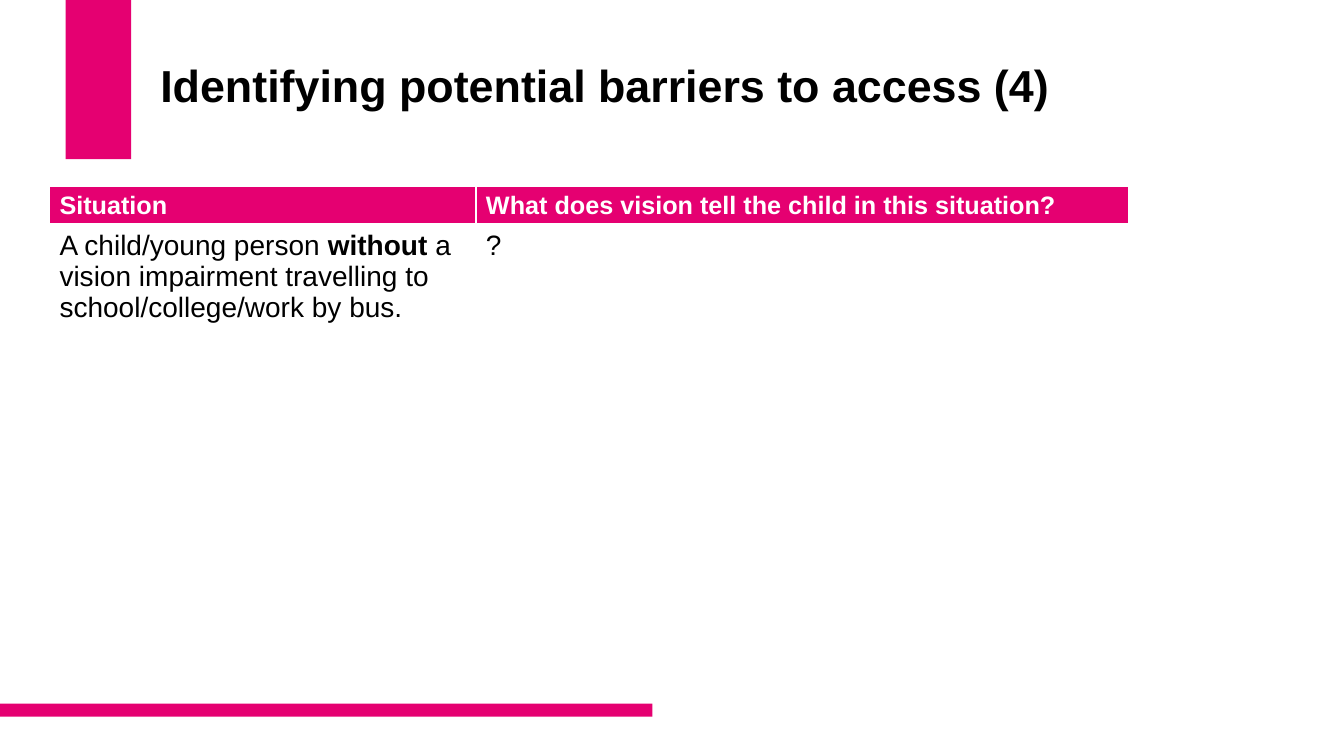
from lxml.etree import SubElement
from pptx import Presentation
from pptx.dml.color import RGBColor
from pptx.enum.shapes import MSO_SHAPE
from pptx.enum.text import MSO_ANCHOR, PP_ALIGN
from pptx.oxml.ns import qn
from pptx.util import Inches, Pt

COLORS = {"accent": "E50071", "text": "000000", "paper": "FFFFFF"}
FONT = "Arial"


def color(name):
    return RGBColor.from_string(COLORS[name])


def add_run(paragraph, text, size, color_name, bold):
    run = paragraph.add_run()
    run.text = text
    run.font.name = FONT
    run.font.size = Pt(size)
    run.font.bold = bold
    run.font.color.rgb = color(color_name)


presentation = Presentation()
presentation.slide_width = Inches(13.33)
presentation.slide_height = Inches(7.5)
slide = presentation.slides.add_slide(presentation.slide_layouts[5])

# Accent bars
for left, top, width, height in [(0.65, 0, 0.65, 1.58), (0, 6.98, 6.47, 0.13)]:
    bar = slide.shapes.add_shape(
        MSO_SHAPE.RECTANGLE, Inches(left), Inches(top), Inches(width), Inches(height))
    bar.shadow.inherit = False
    bar.fill.solid()
    bar.fill.fore_color.rgb = color("accent")
    bar.line.fill.background()

# Title, raised by a deeper bottom inset
title = slide.shapes.title
title.left, title.top = Inches(1.49), Inches(0.4)
title.width, title.height = Inches(9.6), Inches(1.45)
title_frame = title.text_frame
title_frame.word_wrap = True
title_frame.vertical_anchor = MSO_ANCHOR.MIDDLE
title_frame.margin_bottom = Inches(0.55)
paragraph = title_frame.paragraphs[0]
paragraph.alignment = PP_ALIGN.LEFT
paragraph.line_spacing = 0.9
add_run(paragraph, "Identifying potential barriers to access (4)", 32, "text", True)

# Table content: each cell is a list of (text, bold) runs
rows = [
    [[("Situation", True)],
     [("What does vision tell the child in this situation?", True)]],
    [[("A child/young person ", False), ("without", True),
      (" a vision impairment travelling to school/college/work by bus.", False)],
     [("?", False)]],
]
row_styles = [  # height, text size, text colour, fill, bottom border
    (0.37, 18, "paper", "accent", 3),
    (4, 20, "text", "paper", 1),
]
column_widths = [4.23, 6.47]

# Table
table = slide.shapes.add_table(
    len(rows), len(column_widths), Inches(0.49), Inches(1.85),
    Inches(sum(column_widths)), Inches(sum(style[0] for style in row_styles))).table
for column, width in zip(table.columns, column_widths):
    column.width = Inches(width)

for row, cells, style in zip(table.rows, rows, row_styles):
    height, size, text_color, fill, bottom_border = style
    row.height = Inches(height)
    for cell, runs in zip(row.cells, cells):
        for text, bold in runs:
            add_run(cell.text_frame.paragraphs[0], text, size, text_color, bold)

        # Borders come before the fill in the cell properties
        properties = cell._tc.get_or_add_tcPr()
        borders = {"a:lnL": 1, "a:lnR": 1, "a:lnT": 1, "a:lnB": bottom_border}
        if row is not table.rows[0] and fill == "paper":
            borders["a:lnT"] = row_styles[0][4]
        for tag, width in borders.items():
            line = SubElement(properties, qn(tag), w=str(Pt(width)))
            line_fill = SubElement(line, qn("a:solidFill"))
            SubElement(line_fill, qn("a:srgbClr"), val=COLORS["paper"])
        cell.fill.solid()
        cell.fill.fore_color.rgb = color(fill)

presentation.save("out.pptx")
